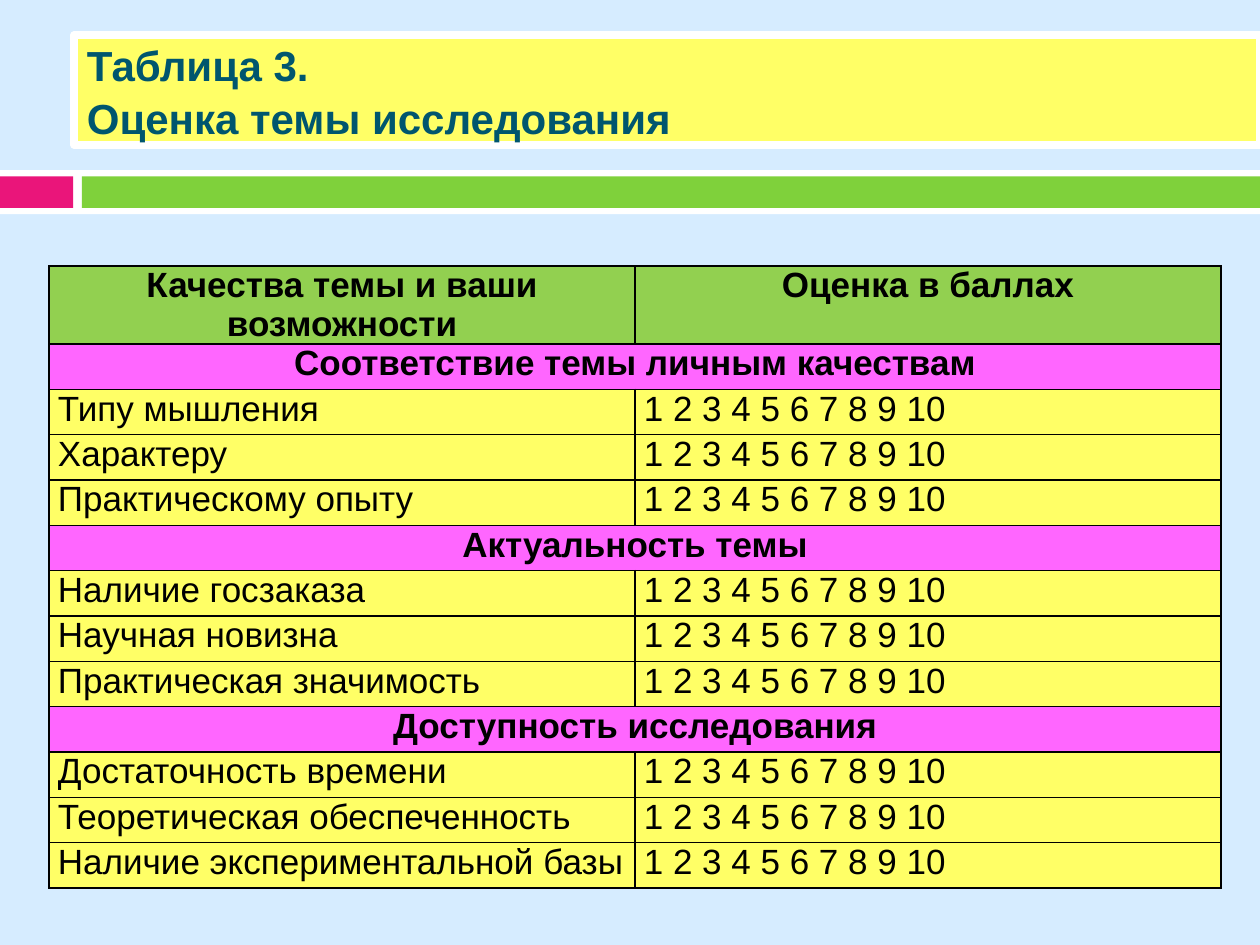
from dataclasses import dataclass

import pptx
import pptx.dml.color
import pptx.enum.shapes
import pptx.enum.text
import pptx.oxml
import pptx.oxml.ns
import pptx.util

Inches = pptx.util.Inches
Pt = pptx.util.Pt
ALIGN = pptx.enum.text.PP_ALIGN

WIDTH, HEIGHT = 10, 7.5
FONT = "Arial"
YELLOW, GREEN, PINK, WHITE, BLACK = "FFFF66", "92D050", "FF66FF", "FFFFFF", "000000"
SCALE = " ".join(str(mark) for mark in range(1, 11))


@dataclass
class Band:
    """A bar of the header strip, as shares of the slide's size."""
    left: float
    top: float
    width: float
    height: float
    colour: str


@dataclass
class Section:
    heading: str
    criteria: list[str]


BANDS = [
    Band(0, 0.18, 1, 0.0467, WHITE),
    Band(0, 0.1867, 0.058, 0.0333, "EA157A"),
    Band(0.065, 0.1867, 0.935, 0.0333, "7FD13B"),
]
HEADER = ["Качества темы и ваши возможности", "Оценка в баллах"]
SECTIONS = [
    Section("Соответствие темы личным качествам",
            ["Типу мышления", "Характеру", "Практическому опыту"]),
    Section("Актуальность темы",
            ["Наличие госзаказа", "Научная новизна", "Практическая значимость"]),
    Section("Доступность исследования",
            ["Достаточность времени", "Теоретическая обеспеченность",
             "Наличие экспериментальной базы"]),
]


def paint(fill, colour: str) -> None:
    fill.solid()
    fill.fore_color.rgb = pptx.dml.color.RGBColor.from_string(colour)


def format_text(frame, size: int, colour: str, bold: bool, align, spacing: float = 1) -> None:
    for para in frame.paragraphs:
        para.alignment = align
        para.line_spacing = spacing
        para.space_before = Pt(0)
        for span in para.runs:
            span.font.name = FONT
            span.font.size = Pt(size)
            span.font.bold = bold
            span.font.color.rgb = pptx.dml.color.RGBColor.from_string(colour)


def draw_band(page, band: Band) -> None:
    box = page.shapes.add_shape(
        pptx.enum.shapes.MSO_SHAPE.RECTANGLE,
        Inches(band.left * WIDTH), Inches(band.top * HEIGHT),
        Inches(band.width * WIDTH), Inches(band.height * HEIGHT))
    box.shadow.inherit = False
    box.line.fill.background()
    paint(box.fill, band.colour)


def draw_title(page, text: str) -> None:
    title = page.shapes.title
    title.left, title.top = Inches(0.59), Inches(0.28)
    title.width, title.height = Inches(9.41), Inches(0.87)
    paint(title.fill, YELLOW)
    paint(title.line.fill, WHITE)
    title.line.width = Pt(4.5)
    frame = title.text_frame
    frame.text = text
    frame.word_wrap = True
    frame.auto_size = pptx.enum.text.MSO_AUTO_SIZE.NONE
    frame.vertical_anchor = pptx.enum.text.MSO_ANCHOR.MIDDLE
    format_text(frame, 24, "00566E", True, ALIGN.LEFT, 1.05)


def add_borders(cell, colour: str) -> None:
    properties = cell._tc.get_or_add_tcPr()
    for index, side in enumerate("LRTB"):
        properties.insert(index, pptx.oxml.parse_xml(
            f'<a:ln{side} {pptx.oxml.ns.nsdecls("a")} w="{Pt(1)}">'
            f'<a:solidFill><a:srgbClr val="{colour}"/></a:solidFill></a:ln{side}>'))


def fill_cell(cell, text: str, colour: str, bold: bool, align) -> None:
    cell.margin_left = cell.margin_right = Inches(0.07)
    cell.margin_top = cell.margin_bottom = 0
    paint(cell.fill, colour)
    add_borders(cell, BLACK)
    cell.text_frame.text = text
    format_text(cell.text_frame, 20, BLACK, bold, align)


def draw_table(page, header: list[str], sections: list[Section]) -> None:
    # Each row: texts, fill, bold, alignment; a heading spans both columns
    rows = [(header, GREEN, True, ALIGN.CENTER)]
    for section in sections:
        rows.append(([section.heading, ""], PINK, True, ALIGN.CENTER))
        rows += [([criterion, SCALE], YELLOW, False, ALIGN.JUSTIFY)
                 for criterion in section.criteria]

    row_height, header_height = 0.36, 0.62
    total = header_height + row_height * (len(rows) - 1)
    table = page.shapes.add_table(
        len(rows), len(header), Inches(0.39), Inches(2.11),
        Inches(9.3), Inches(total)).table
    for index, (texts, colour, bold, align) in enumerate(rows):
        table.rows[index].height = Inches(row_height if index else header_height)
        for column, text in enumerate(texts):
            fill_cell(table.cell(index, column), text, colour, bold, align)
        if colour == PINK:
            table.cell(index, 0).merge(table.cell(index, 1))


def main() -> None:
    deck = pptx.Presentation()
    deck.slide_width, deck.slide_height = Inches(WIDTH), Inches(HEIGHT)
    page = deck.slides.add_slide(deck.slide_layouts.get_by_name("Title Only"))
    paint(page.background.fill, "D6ECFF")

    # Header strip and title
    for band in BANDS:
        draw_band(page, band)
    draw_title(page, "Таблица 3.\nОценка темы исследования")

    # Rating table
    draw_table(page, HEADER, SECTIONS)
    deck.save("out.pptx")


if __name__ == "__main__":
    main()
